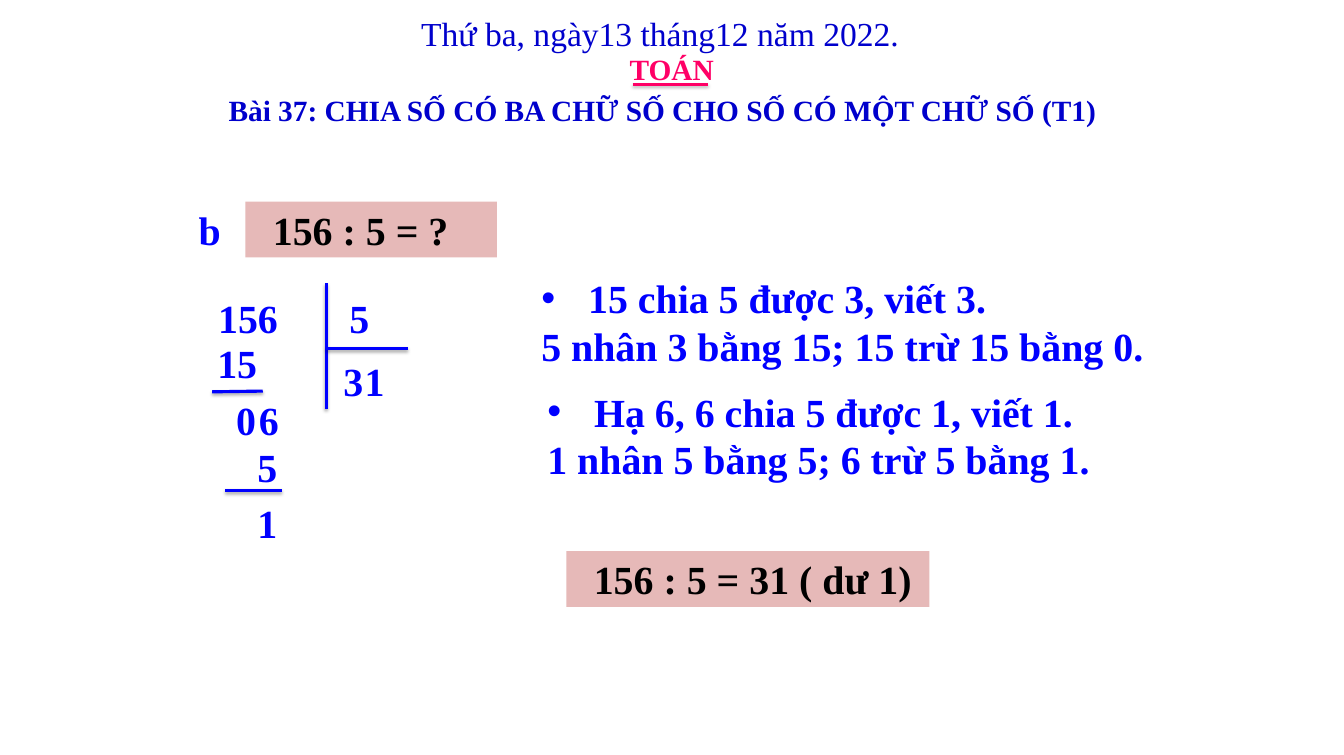
from dataclasses import dataclass
from typing import Optional

from lxml.etree import SubElement
from pptx import Presentation
from pptx.dml.color import RGBColor
from pptx.enum.shapes import MSO_CONNECTOR, MSO_SHAPE
from pptx.enum.text import MSO_ANCHOR, MSO_AUTO_SIZE, PP_ALIGN
from pptx.oxml.ns import qn
from pptx.util import Inches, Pt

COLUMNS, ROWS = 178, 100  # square cells, a tenth of an inch wide


@dataclass(frozen=True)
class Theme:
    font: str = "Times New Roman"
    heading: str = "0000CC"
    subject: str = "FF0066"
    working: str = "0000FF"
    sum_text: str = "000000"
    sum_fill: str = "E6B9B8"
    paper: str = "FFFFFF"
    shadow: str = "000000"
    heading_size: int = 28
    date_size: int = 32
    body_size: int = 38


THEME = Theme()


@dataclass(frozen=True)
class Label:
    lines: tuple[str, ...]
    col: float
    row: float
    cols: float
    rows: float = 7.4
    color: str = THEME.working
    size: int = THEME.body_size
    bold: bool = True
    fill: Optional[str] = None
    align: PP_ALIGN = PP_ALIGN.JUSTIFY
    inset: float = 1
    wrap: bool = True
    bullet: bool = False


@dataclass(frozen=True)
class Rule:
    col: float
    row: float
    end_col: float
    end_row: float
    color: str = THEME.working
    width: float = 3


def digit(text: str, col: float, row: float, cols: float = 5.4) -> Label:
    return Label((text,), col, row, cols)


LABELS = (
    Label(("Thứ ba, ngày13 tháng12 năm 2022.",), 54.8, 1.2, 65.9, 6.4, THEME.heading,
          THEME.date_size, bold=False, align=PP_ALIGN.LEFT, wrap=False),
    Label(("TOÁN",), 82.4, 6.3, 13.3, 5.7, THEME.subject, THEME.heading_size,
          align=PP_ALIGN.LEFT, wrap=False),
    Label(("b",), 24, 26.7, 8.3, fill=THEME.paper, inset=2.3),
    Label(("156 : 5 = ?",), 32.5, 26.7, 33.3, color=THEME.sum_text,
          fill=THEME.sum_fill, inset=3.64),
    Label(("15 chia 5 được 3, viết 3.", "5 nhân 3 bằng 15; 15 trừ 15 bằng 0."),
          70.7, 35.8, 84.2, 13.8, fill=THEME.paper, bullet=True),
    Label(("Hạ 6, 6 chia 5 được 1, viết 1.", "1 nhân 5 bằng 5; 6 trừ 5 bằng 1."),
          71.5, 50.8, 79.2, 13.8, fill=THEME.paper, bullet=True),
    Label(("156 : 5 = 31 ( dư 1)",), 75, 73, 48.1, color=THEME.sum_text,
          fill=THEME.sum_fill, inset=3.64),
    # Long division: dividend, divisor, quotient, then each subtraction
    digit("156", 27.9, 38.4, 10.9),
    digit("5", 45.3, 38.4),
    digit("3", 44.5, 46.8),
    digit("1", 47.3, 46.7),
    digit("15", 27.8, 44.4, 8.4),
    digit("0", 30.3, 51.9),
    digit("6", 33.3, 51.9),
    digit("5", 33.1, 58.2),
    digit("1", 33.1, 65.6),
)

RULES = (
    Rule(83.8, 11.2, 93.8, 11.2, THEME.subject, 2),
    Rule(43.2, 37.5, 43.2, 54.2),
    Rule(43.2, 46.2, 54, 46.2),
    Rule(28.1, 51.9, 34.8, 51.8),
    Rule(29.8, 65, 37.3, 65),
)


def cells(count: float) -> int:
    return Inches(count / 10)


def style_paragraph(paragraph, color: str, size: int, bold: bool, align: PP_ALIGN) -> None:
    paragraph.alignment = align
    font = paragraph.font
    font.name, font.size, font.bold = THEME.font, Pt(size), bold
    font.color.rgb = RGBColor.from_string(color)


def add_bullet(paragraph) -> None:
    properties = paragraph._p.get_or_add_pPr()
    indent = Inches(0.62)
    properties.set("marL", str(indent))
    properties.set("indent", str(-indent))
    SubElement(properties, qn("a:buFont")).set("typeface", "Arial")
    SubElement(properties, qn("a:buChar")).set("char", "•")


def draw_label(slide, label: Label) -> None:
    place = [cells(n) for n in (label.col, label.row, label.cols, label.rows)]
    if label.fill:
        shape = slide.shapes.add_shape(MSO_SHAPE.RECTANGLE, *place)
        shape.shadow.inherit = False
        shape.fill.solid()
        shape.fill.fore_color.rgb = RGBColor.from_string(label.fill)
        shape.line.fill.background()
    else:
        shape = slide.shapes.add_textbox(*place)
    frame = shape.text_frame
    frame.word_wrap = label.wrap
    frame.vertical_anchor = MSO_ANCHOR.TOP
    frame.margin_left = cells(label.inset)
    frame.text = "\n".join(label.lines)
    if label.bullet:
        add_bullet(frame.paragraphs[0])
    for paragraph in frame.paragraphs:
        style_paragraph(paragraph, label.color, label.size, label.bold, label.align)


def draw_rule(slide, rule: Rule) -> None:
    ends = [cells(n) for n in (rule.col, rule.row, rule.end_col, rule.end_row)]
    line = slide.shapes.add_connector(MSO_CONNECTOR.STRAIGHT, *ends)
    line.line.color.rgb = RGBColor.from_string(rule.color)
    line.line.width = Pt(rule.width)
    effects = SubElement(line._element.spPr, qn("a:effectLst"))
    shadow = SubElement(effects, qn("a:outerShdw"), blurRad=str(Pt(3.1)),
                        dist=str(Pt(1.8)), dir="5400000", rotWithShape="0")
    tint = SubElement(shadow, qn("a:srgbClr"), val=THEME.shadow)
    SubElement(tint, qn("a:alpha"), val="35000")


def draw_title(slide) -> None:
    title = slide.shapes.title
    title.left, title.top = cells(27.3), cells(11.4)
    title.width, title.height = cells(120.8), cells(6.3)
    frame = title.text_frame
    frame.text = "Bài 37: CHIA SỐ CÓ BA CHỮ SỐ CHO SỐ CÓ MỘT CHỮ SỐ (T1)"
    frame.word_wrap = True
    frame.auto_size = MSO_AUTO_SIZE.NONE
    frame.vertical_anchor = MSO_ANCHOR.TOP
    frame.margin_left = frame.margin_right = cells(1.6)
    frame.margin_top = frame.margin_bottom = cells(0.8)
    style_paragraph(frame.paragraphs[0], THEME.heading, THEME.heading_size, True,
                    PP_ALIGN.CENTER)


def main() -> None:
    deck = Presentation()
    deck.slide_width, deck.slide_height = cells(COLUMNS), cells(ROWS)
    slide = deck.slides.add_slide(deck.slide_layouts.get_by_name("Title Only"))
    draw_title(slide)
    for label in LABELS:
        draw_label(slide, label)
    for rule in RULES:
        draw_rule(slide, rule)
    deck.save("out.pptx")


if __name__ == "__main__":
    main()
